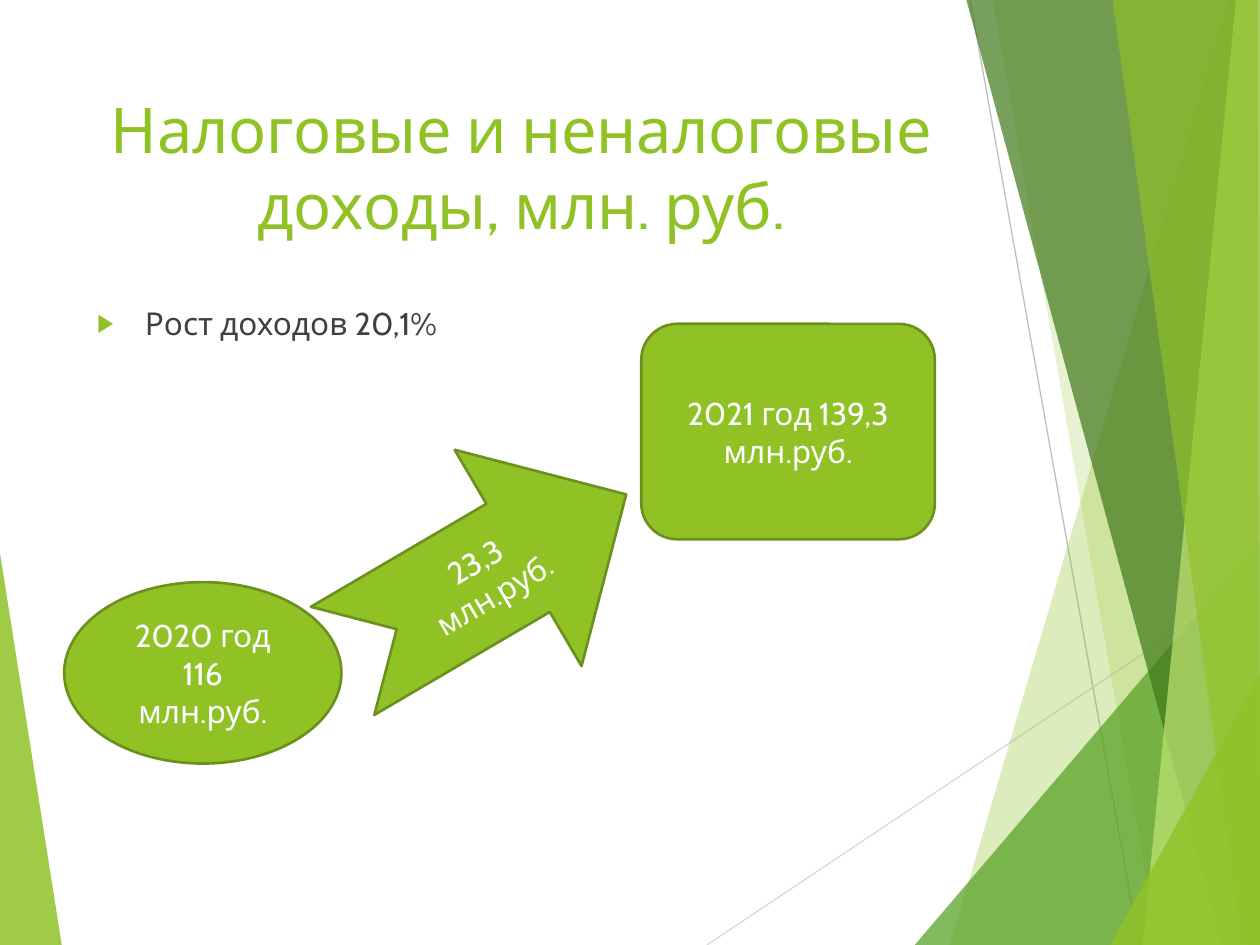
from lxml import etree
from pptx import Presentation
from pptx import util as u
from pptx.dml.color import RGBColor
from pptx.enum import shapes, text
from pptx.oxml.ns import qn

WIDTH, HEIGHT = 10, 7.5
MARGIN, COLUMN = 0.67, 6.94
GREEN, EDGE, WHITE, GREY = "90C226", "6B901C", "FFFFFF", "404040"

# Corner points, colour and opacity in percent, from back to front
LEFT_WEDGE = ([(0, 4.39), (0.49, 7.5), (0, 7.5)], GREEN, 85)
RIGHT_FACETS = [
    ([(9.75, 0), (7.54, 7.5), (10, 7.5), (10, 0)], GREEN, 30),
    ([(7.88, 0), (9.19, 7.5), (10, 7.5), (10, 0)], GREEN, 20),
    ([(7.26, 7.5), (10, 4.29), (10, 7.5)], "54A021", 72),
    ([(7.67, 0), (9.7, 7.5), (10, 7.5), (10, 0)], "3F7819", 70),
    ([(9.81, 0), (9.07, 7.5), (10, 7.5), (10, 0)], "C0E474", 70),
    ([(8.83, 0), (9.86, 7.5), (10, 7.5), (9.98, 0)], GREEN, 65),
    ([(8.81, 7.5), (10, 5.35), (10, 7.5)], GREEN, 80),
]
RAYS = [((5.61, 7.5), (10, 4.57), "D9D9D9"), ((7.7, 0), (9.04, 7.5), "BFBFBF")]

FIGURES = [
    (shapes.MSO_SHAPE.OVAL, (0.51, 4.62, 2.2, 1.44), 0, "2020 год 116 млн.руб."),
    (shapes.MSO_SHAPE.ROUNDED_RECTANGLE, (5.09, 2.57, 2.33, 1.71), 0,
     "2021 год 139,3 млн.руб."),
    (shapes.MSO_SHAPE.NOTCHED_RIGHT_ARROW, (2.54, 3.59, 2.61, 1.99), 329.6,
     "23,3 млн.руб."),
]


def rgb(color):
    return RGBColor.from_string(color)


def paint(shape, color):
    shape.shadow.inherit = False
    shape.fill.solid()
    shape.fill.fore_color.rgb = rgb(color)


def add_facet(slide, corners, color, opacity):
    start, *others = [(u.Inches(x), u.Inches(y)) for x, y in corners]
    builder = slide.shapes.build_freeform(*start)
    builder.add_line_segments(others, close=True)
    facet = builder.convert_to_shape()
    paint(facet, color)
    facet.line.fill.background()
    solid = facet._element.spPr.find(qn("a:solidFill"))
    etree.SubElement(solid[0], qn("a:alpha"), val=str(opacity * 1000))


def add_ray(slide, start, end, color):
    ray = slide.shapes.add_connector(
        shapes.MSO_CONNECTOR.STRAIGHT, *(u.Inches(v) for v in start + end))
    ray.line.color.rgb = rgb(color)
    ray.line.width = u.Pt(0.75)
    etree.SubElement(ray._element.spPr, qn("a:effectLst"))


def write(frame, words, size, color, align, anchor):
    frame.word_wrap = True
    frame.auto_size = text.MSO_AUTO_SIZE.NONE
    frame.vertical_anchor = anchor
    paragraph = frame.paragraphs[0]
    paragraph.alignment = align
    run = paragraph.add_run()
    run.text = words
    run.font.name = "Cabin"
    run.font.size = u.Pt(size)
    run.font.color.rgb = rgb(color)
    return paragraph


def place(slide, placeholder, box):
    """Position a placeholder and bring it in front of the decoration."""
    placeholder.left, placeholder.top, placeholder.width, placeholder.height = (
        u.Inches(v) for v in box)
    slide.shapes._spTree.append(placeholder._element)


def add_bullet(paragraph, color, percent, indent):
    paragraph.space_before = u.Pt(10)
    props = paragraph._p.get_or_add_pPr()
    props.set("marL", str(u.Inches(indent)))
    props.set("indent", str(-u.Inches(indent)))
    bullet_color = etree.SubElement(props, qn("a:buClr"))
    etree.SubElement(bullet_color, qn("a:srgbClr"), val=color)
    etree.SubElement(props, qn("a:buSzPct"), val=str(percent * 1000))
    etree.SubElement(props, qn("a:buChar"), char="▶")


def add_figure(slide, kind, box, rotation, words):
    figure = slide.shapes.add_shape(kind, *(u.Inches(v) for v in box))
    figure.rotation = rotation
    paint(figure, GREEN)
    figure.line.color.rgb = rgb(EDGE)
    figure.line.width = u.Pt(1.5)
    write(figure.text_frame, words, 18, WHITE,
          text.PP_ALIGN.CENTER, text.MSO_ANCHOR.MIDDLE)


def add_decoration(slide):
    add_facet(slide, *LEFT_WEDGE)
    for ray in RAYS:
        add_ray(slide, *ray)
    for facet in RIGHT_FACETS:
        add_facet(slide, *facet)


def main():
    deck = Presentation()
    deck.slide_width, deck.slide_height = u.Inches(WIDTH), u.Inches(HEIGHT)
    slide = deck.slides.add_slide(deck.slide_layouts[1])
    title, body = slide.placeholders

    add_decoration(slide)
    place(slide, title, (MARGIN, MARGIN, COLUMN, 1.44))
    write(title.text_frame, "Налоговые и неналоговые доходы, млн. руб.", 36, GREEN,
          text.PP_ALIGN.CENTER, text.MSO_ANCHOR.TOP)
    place(slide, body, (MARGIN, 2.36, COLUMN, 4.24))
    growth = write(body.text_frame, "Рост доходов 20,1%", 18, GREY,
                   text.PP_ALIGN.LEFT, text.MSO_ANCHOR.TOP)
    add_bullet(growth, GREEN, 80, 0.38)
    for figure in FIGURES:
        add_figure(slide, *figure)

    deck.save("out.pptx")


if __name__ == "__main__":
    main()
